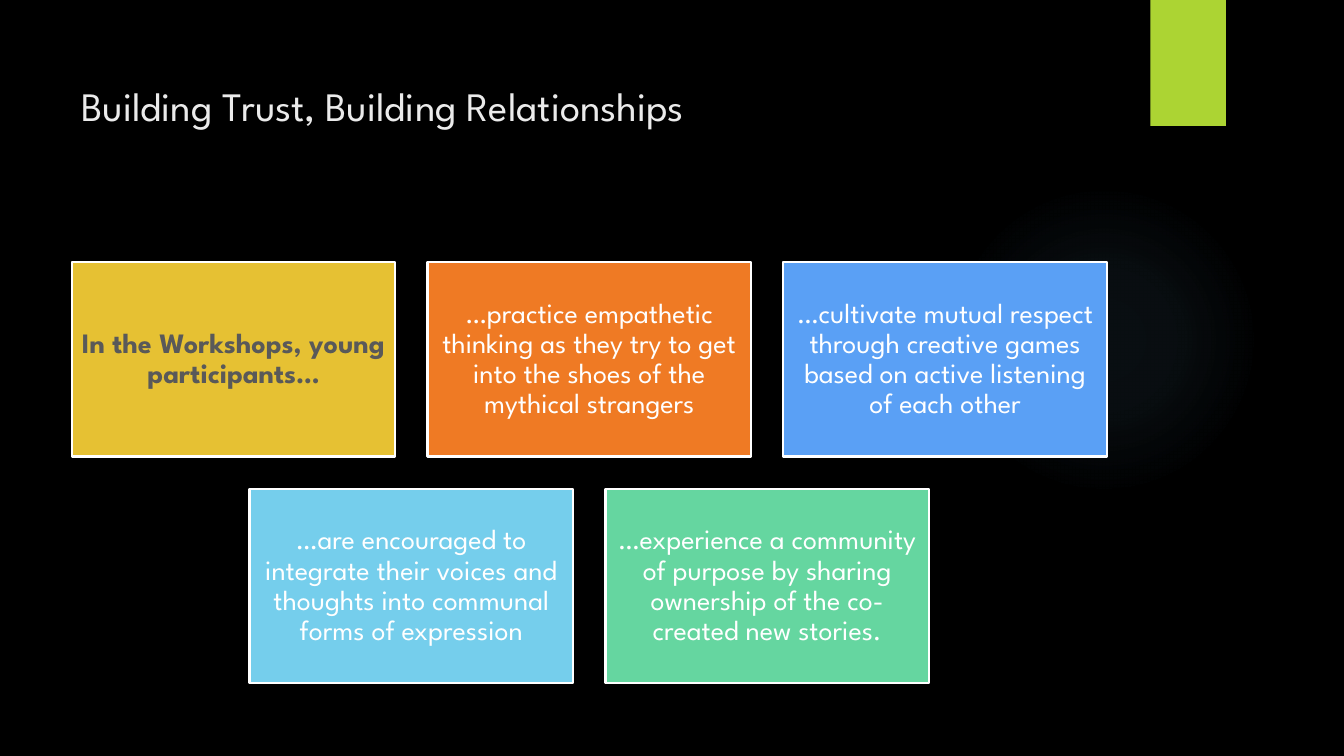
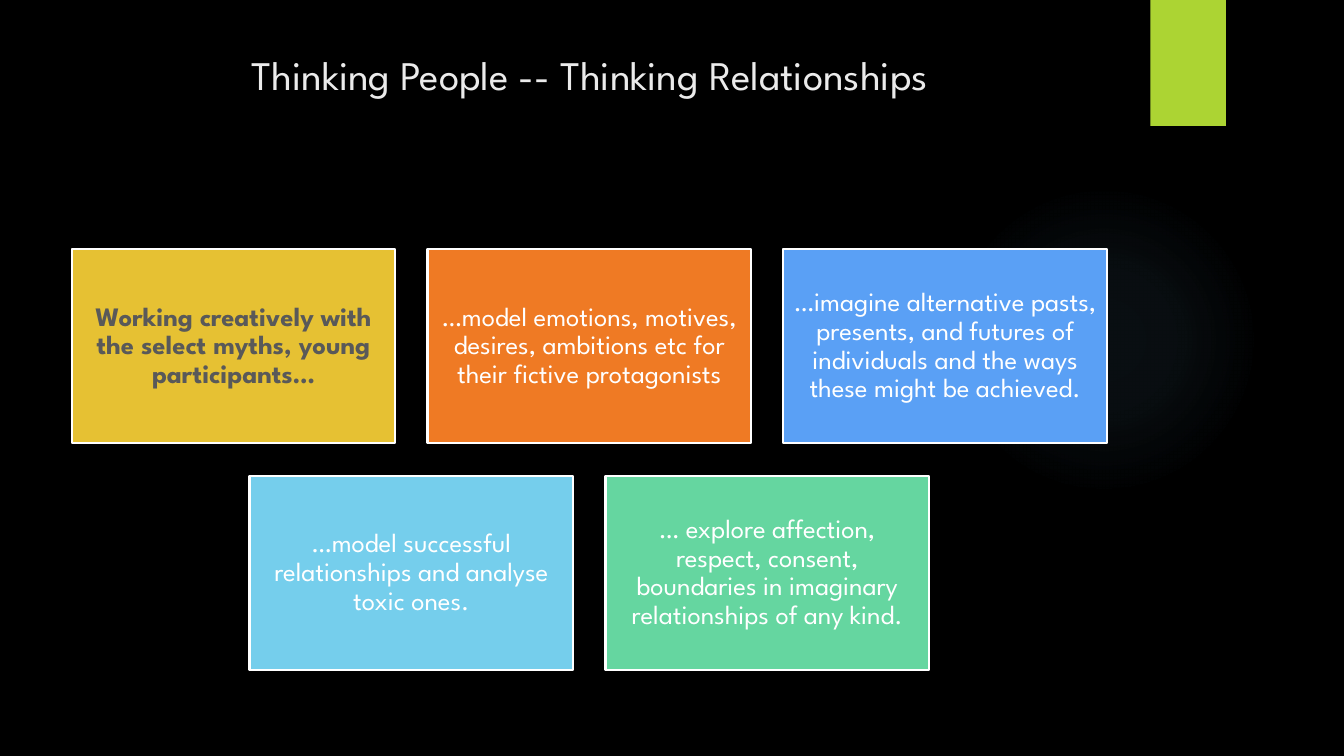
from pptx import Presentation
from pptx.dml.color import RGBColor
from pptx.enum.shapes import MSO_SHAPE
from pptx.enum.text import MSO_ANCHOR, PP_ALIGN
from pptx.oxml import parse_xml
from pptx.oxml.ns import nsdecls
from pptx.util import Inches, Pt

RECT, OVAL = MSO_SHAPE.RECTANGLE, MSO_SHAPE.OVAL
TOP, MIDDLE = MSO_ANCHOR.TOP, MSO_ANCHOR.MIDDLE
LEFT, CENTER = PP_ALIGN.LEFT, PP_ALIGN.CENTER

FONT = "League Spartan"
COLORS = {
    "background": "000000", "band": "ACD433", "glow": "7AC4F0",
    "title": "EBEBEB", "lead": "595959", "white": "FFFFFF",
    "yellow": "E6C133", "orange": "EF7A24", "blue": "5AA0F5",
    "sky": "75CEEC", "green": "65D6A0",
}
CARD_FILLS = ["yellow", "orange", "blue", "sky", "green"]
GLOW_STOPS = [(0, 7), (36, 6), (69, 0)]  # position and opacity, percent

MARGIN = 0.71
CARD_W, CARD_H, GAP = 3.21, 1.93, 0.32
PER_ROW = 3

SLIDES = [
    {
        "title": "Building Trust, Building Relationships",
        "title_top": 0.81, "title_align": LEFT, "title_size": 28.8,
        "cards_top": 2.6, "card_size": 20,
        "cards": [
            "In the Workshops, young participants…",
            "…practice empathetic thinking as they try to get into the shoes "
            "of the mythical strangers",
            "…cultivate mutual respect through creative games based on active "
            "listening of each other",
            "…are encouraged to integrate their voices and thoughts into "
            "communal forms of expression",
            "…experience a community of purpose by sharing ownership of the "
            "co-created new stories.",
        ],
    },
    {
        "title": "Thinking People -- Thinking Relationships",
        "title_top": 0.5, "title_align": CENTER, "title_size": 29,
        "cards_top": 2.47, "card_size": 19,
        "cards": [
            "Working creatively with the select myths, young participants…",
            "…model emotions, motives, desires, ambitions etc for their "
            "fictive protagonists",
            "…imagine alternative pasts, presents, and futures of individuals "
            "and the ways these might be achieved.",
            "…model successful relationships and analyse toxic ones.",
            "… explore affection, respect, consent, boundaries in imaginary "
            "relationships of any kind.",
        ],
    },
]


def rgb(name):
    return RGBColor.from_string(COLORS[name])


def add_box(s, kind, left, top, width, height, fill=None):
    """Add a shape without shadow or outline."""
    sp = s.shapes.add_shape(kind, Inches(left), Inches(top),
                            Inches(width), Inches(height))
    sp.shadow.inherit = False
    sp.line.fill.background()
    if fill:
        sp.fill.solid()
        sp.fill.fore_color.rgb = rgb(fill)
    else:
        sp.fill.background()
    return sp


def set_text(sp, text, size, color, align, anchor, bold=False):
    tf = sp.text_frame
    tf.word_wrap = True
    tf.vertical_anchor = anchor
    p = tf.paragraphs[0]
    p.alignment = align
    p.line_spacing = 0.9
    r = p.add_run()
    r.text = text
    r.font.name = FONT
    r.font.size = Pt(size)
    r.font.bold = bold
    r.font.color.rgb = rgb(color)


def add_glow(s):
    """Add the faint round glow, a radial gradient that fades out."""
    sp = add_box(s, OVAL, 9.41, 1.83, 3.08, 3.08)
    stops = "".join(
        f'<a:gs pos="{pos * 1000}"><a:srgbClr val="{COLORS["glow"]}">'
        f'<a:alpha val="{alpha * 1000}"/></a:srgbClr></a:gs>'
        for pos, alpha in GLOW_STOPS)
    gradient = parse_xml(
        f'<a:gradFill {nsdecls("a")} rotWithShape="1"><a:gsLst>{stops}</a:gsLst>'
        '<a:path path="circle"><a:fillToRect l="50000" t="50000" r="50000" '
        'b="50000"/></a:path></a:gradFill>')
    props = sp.element.spPr
    props.replace(props.find("{*}noFill"), gradient)


def add_title(s, content):
    box = s.shapes.add_textbox(Inches(MARGIN), Inches(content["title_top"]),
                               Inches(10.29), Inches(1.22))
    set_text(box, content["title"], content["title_size"], "title",
             content["title_align"], TOP)


def add_card(s, left, top, text, size, fill, is_lead):
    sp = add_box(s, RECT, left, top, CARD_W, CARD_H, fill)
    sp.line.color.rgb = rgb("white")
    sp.line.width = Pt(1.5)
    tf = sp.text_frame
    tf.margin_left = tf.margin_right = Inches(0.08)
    tf.margin_top = tf.margin_bottom = Inches(0.08)
    set_text(sp, text, size, "lead" if is_lead else "white", CENTER, MIDDLE,
             bold=is_lead)


def add_cards(s, content):
    """Lay the cards out in rows, each row centred under the first."""
    cards = content["cards"]
    for i, (text, fill) in enumerate(zip(cards, CARD_FILLS)):
        row, col = divmod(i, PER_ROW)
        in_row = min(PER_ROW, len(cards) - row * PER_ROW)
        left = MARGIN + (col + (PER_ROW - in_row) / 2) * (CARD_W + GAP)
        top = content["cards_top"] + row * (CARD_H + GAP)
        add_card(s, left, top, text, content["card_size"], fill, i == 0)


def add_slide(prs, content):
    s = prs.slides.add_slide(prs.slide_layouts[6])
    add_glow(s)
    add_box(s, RECT, 11.41, 0, 0.75, 1.25, "band")
    add_title(s, content)
    add_cards(s, content)


def main():
    prs = Presentation()
    prs.slide_width, prs.slide_height = Inches(13.33), Inches(7.5)
    background = prs.slide_master.background.fill
    background.solid()
    background.fore_color.rgb = rgb("background")
    for content in SLIDES:
        add_slide(prs, content)
    prs.save("out.pptx")


if __name__ == "__main__":
    main()
